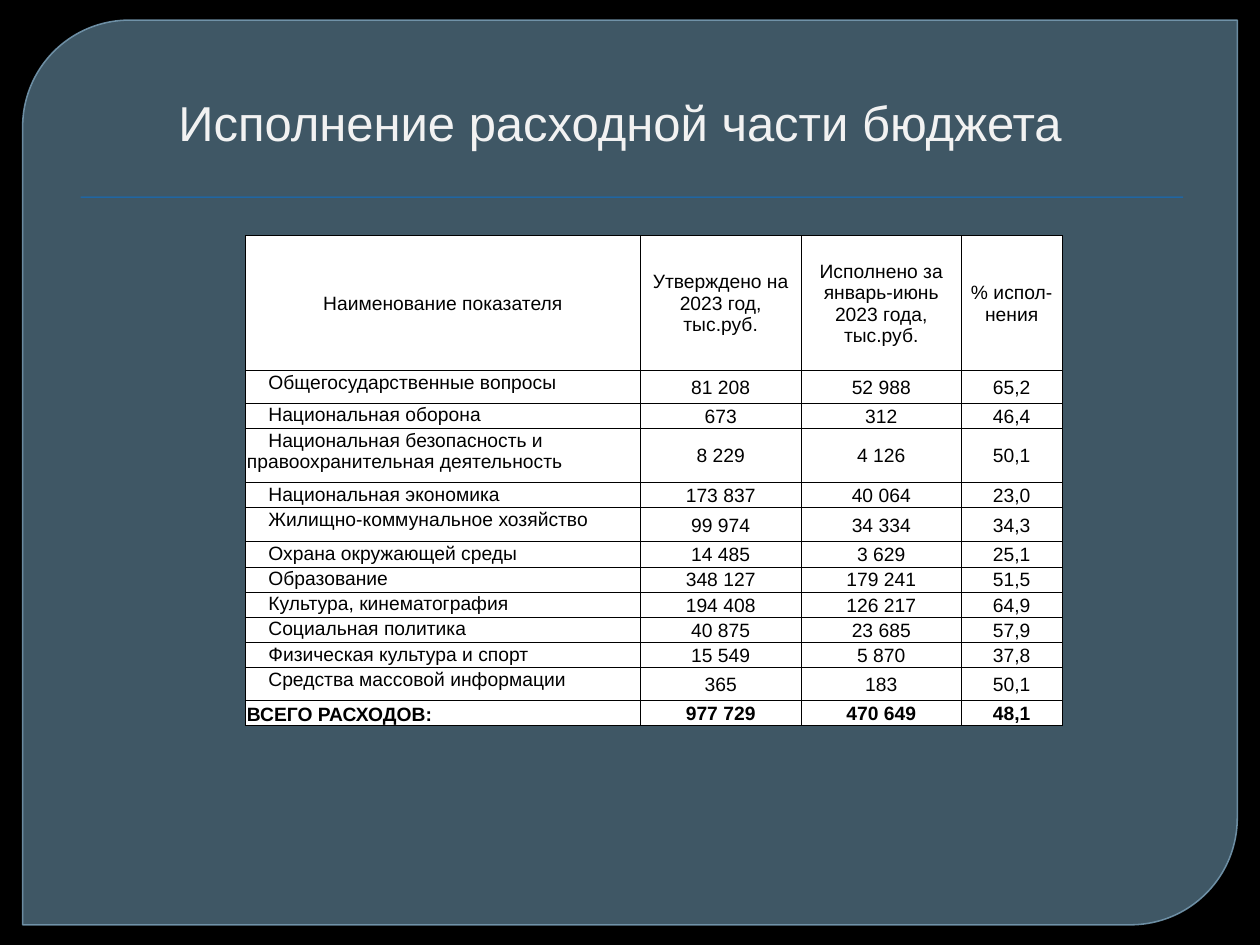
from lxml import etree
from pptx import Presentation
from pptx.dml.color import RGBColor
from pptx.enum.shapes import MSO_SHAPE
from pptx.enum.text import MSO_ANCHOR, MSO_AUTO_SIZE, PP_ALIGN
from pptx.oxml import parse_xml
from pptx.oxml.ns import nsdecls, qn
from pptx.util import Inches, Pt

COLORS = {
    "back": "000000",
    "panel": "61869C",
    "edge": "779BB2",
    "rule": "0F6FC6",
    "title": "F2F2F2",
    "cell": "FFFFFF",
    "ink": "000000",
}
FONT = "Arial"
COLS = [3.13, 1.28, 1.27, 0.8]
LINE_H = 0.2
ROW_HEIGHTS = {0: 1.07, 1: 0.26, 3: 0.43, 5: 0.27, 11: 0.26}
ROWS = [
    ("Наименование показателя", "Утверждено на 2023 год, тыс.руб.",
     "Исполнено за январь-июнь 2023 года, тыс.руб.", "% испол-нения"),
    ("Общегосударственные вопросы", "81 208", "52 988", "65,2"),
    ("Национальная оборона", "673", "312", "46,4"),
    ("Национальная безопасность и правоохранительная деятельность",
     "8 229", "4 126", "50,1"),
    ("Национальная экономика", "173 837", "40 064", "23,0"),
    ("Жилищно-коммунальное хозяйство", "99 974", "34 334", "34,3"),
    ("Охрана окружающей среды", "14 485", "3 629", "25,1"),
    ("Образование", "348 127", "179 241", "51,5"),
    ("Культура, кинематография", "194 408", "126 217", "64,9"),
    ("Социальная политика", "40 875", "23 685", "57,9"),
    ("Физическая культура и спорт", "15 549", "5 870", "37,8"),
    ("Средства массовой информации", "365", "183", "50,1"),
    ("ВСЕГО РАСХОДОВ:", "977 729", "470 649", "48,1"),
]


def rgb(name):
    return RGBColor.from_string(COLORS[name])


def apply(obj, values):
    for name, value in values.items():
        setattr(obj, name, value)


def style_font(font, color, **values):
    apply(font, {"name": FONT, **values})
    font.color.rgb = rgb(color)


def set_alpha(fill, percent):
    clr = fill.find(".//" + qn("a:srgbClr"))
    etree.SubElement(clr, qn("a:alpha")).set("val", str(percent * 1000))


def add_filled(slide, kind, box, color):
    sp = slide.shapes.add_shape(kind, *map(Inches, box))
    sp.shadow.inherit = False
    sp.fill.solid()
    sp.fill.fore_color.rgb = rgb(color)
    return sp


def add_panel(slide, box):
    sp = add_filled(slide, MSO_SHAPE.ROUND_2_DIAG_RECTANGLE, box, "panel")
    sp.adjustments[0] = 0.118
    sp.adjustments[1] = 0
    sp.line.color.rgb = rgb("edge")
    sp.line.width = Pt(0.87)
    props = sp.element.spPr
    set_alpha(props.find(qn("a:solidFill")), 65)
    set_alpha(props.find(qn("a:ln")), 88)


def add_rule(slide, box):
    sp = add_filled(slide, MSO_SHAPE.RECTANGLE, box, "rule")
    sp.line.fill.background()
    effects = sp.element.spPr.find(qn("a:effectLst"))
    effects.append(parse_xml(
        f'<a:outerShdw {nsdecls("a")} blurRad="{Pt(1)}" dist="{Pt(1)}" dir="5400000">'
        f'<a:srgbClr val="{COLORS["back"]}"><a:alpha val="75000"/></a:srgbClr>'
        '</a:outerShdw>'))


def add_title(slide, box):
    sp = slide.shapes.title
    slide.shapes.element.append(sp.element)
    apply(sp, dict(zip(("left", "top", "width", "height"), map(Inches, box))))
    tf = sp.text_frame
    tf.text = "Исполнение расходной части бюджета"
    apply(tf, {"word_wrap": True, "auto_size": MSO_AUTO_SIZE.NONE,
               "vertical_anchor": MSO_ANCHOR.BOTTOM, "margin_right": Inches(0.26)})
    p = tf.paragraphs[0]
    p.alignment = PP_ALIGN.CENTER
    style_font(p.runs[0].font, "title", size=Pt(28))


def add_borders(cell):
    props = cell._tc.get_or_add_tcPr()
    for i, side in enumerate(("lnL", "lnR", "lnT", "lnB")):
        props.insert(i, parse_xml(
            f'<a:{side} {nsdecls("a")} w="{Pt(0.5)}"><a:solidFill>'
            f'<a:srgbClr val="{COLORS["ink"]}"/></a:solidFill></a:{side}>'))


def fill_cell(cell, text, anchor, align, bold, indent):
    cell.text = text
    apply(cell, {"margin_left": Inches(0.01), "margin_right": Inches(0.01),
                 "margin_top": Inches(0.01), "margin_bottom": 0,
                 "vertical_anchor": anchor})
    cell.fill.solid()
    cell.fill.fore_color.rgb = rgb("cell")
    add_borders(cell)
    p = cell.text_frame.paragraphs[0]
    p.alignment = align
    if indent:
        p._p.get_or_add_pPr().set("indent", str(Inches(indent)))
    style_font(p.runs[0].font, "ink", size=Pt(11), bold=bold)


def add_budget_table(slide, box):
    table = slide.shapes.add_table(len(ROWS), len(COLS), *map(Inches, box)).table
    for col, width in zip(table.columns, COLS):
        col.width = Inches(width)
    last = len(ROWS) - 1
    for i, values in enumerate(ROWS):
        table.rows[i].height = Inches(ROW_HEIGHTS.get(i, LINE_H))
        for j, text in enumerate(values):
            anchor, align, indent = MSO_ANCHOR.MIDDLE, PP_ALIGN.CENTER, 0
            if j == 0 and i == last:
                anchor, align = MSO_ANCHOR.BOTTOM, PP_ALIGN.LEFT
            elif j == 0 and i > 0:
                anchor, align, indent = MSO_ANCHOR.TOP, PP_ALIGN.LEFT, 0.17
            fill_cell(table.cell(i, j), text, anchor, align, i == last, indent)


def main():
    prs = Presentation()
    apply(prs, {"slide_width": Inches(10), "slide_height": Inches(7.5)})
    s = prs.slides.add_slide(prs.slide_layouts[5])
    s.background.fill.solid()
    s.background.fill.fore_color.rgb = rgb("back")
    add_panel(s, (0.18, 0.16, 9.64, 7.18))
    add_rule(s, (0.64, 1.56, 8.75, 0.01))
    add_title(s, (0.5, 0.29, 9, 0.96))
    add_budget_table(s, (1.95, 1.87, 6.48, 3.87))
    prs.save("out.pptx")


if __name__ == "__main__":
    main()
